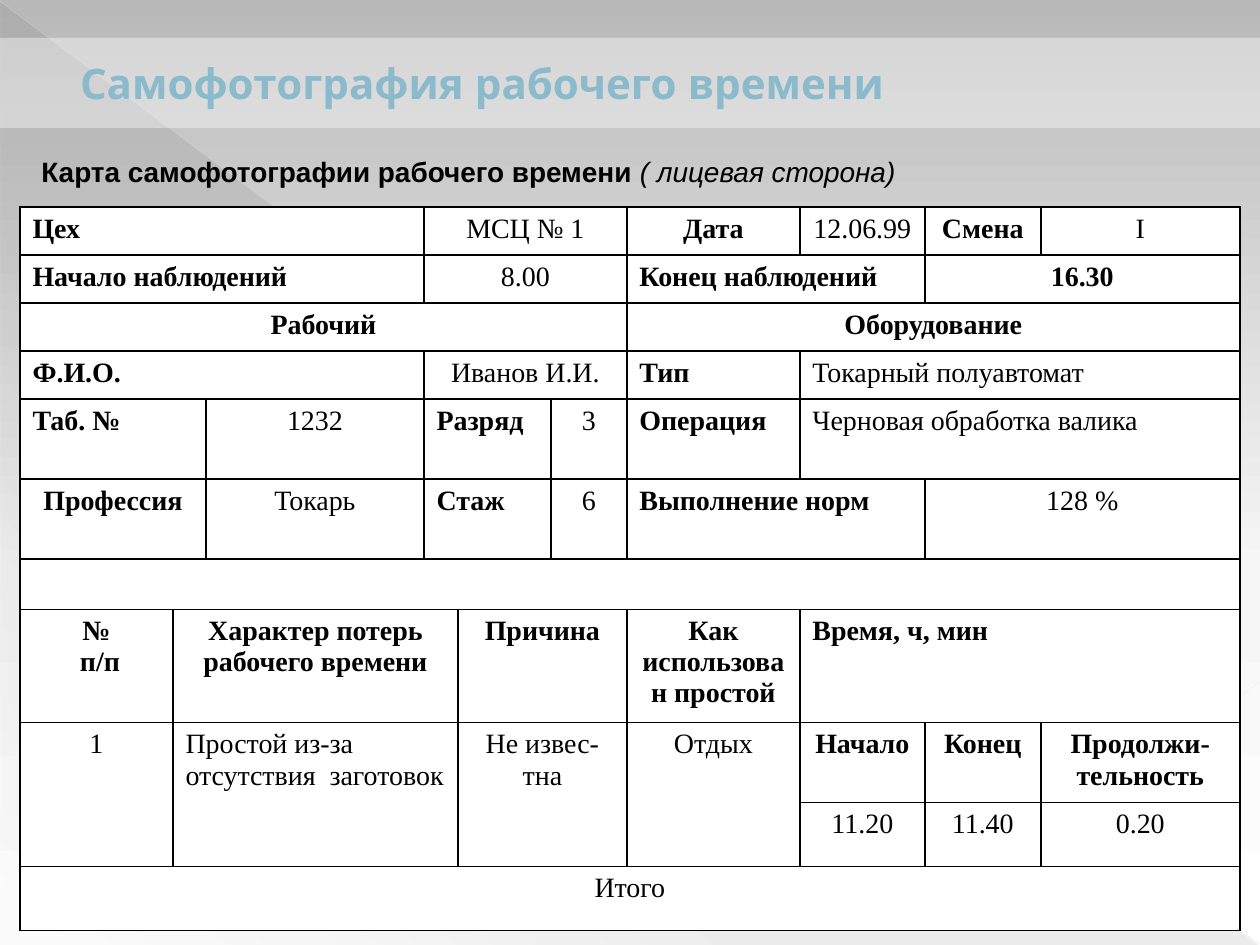
from lxml import etree
from pptx import Presentation
from pptx.dml.color import RGBColor
from pptx.enum.shapes import MSO_CONNECTOR, MSO_SHAPE
from pptx.enum.text import MSO_ANCHOR, PP_ALIGN
from pptx.oxml import parse_xml
from pptx.oxml.ns import qn
from pptx.util import Pt

PX = 914400 // 126
LEFT, CENTER = PP_ALIGN.LEFT, PP_ALIGN.CENTER
MIDDLE = MSO_ANCHOR.MIDDLE
STRAIGHT = MSO_CONNECTOR.STRAIGHT
NAMESPACE = "http://schemas.openxmlformats.org/drawingml/2006/main"
color = RGBColor.from_string


def write(paragraph, text, font="Times New Roman", size=16, fill="000000",
          bold=False, italic=False, align=LEFT):
    paragraph.alignment = align
    span = paragraph.add_run()
    span.text = text
    span.font.name = font
    span.font.size = Pt(size)
    span.font.bold = bold
    span.font.italic = italic
    span.font.color.rgb = color(fill)


def gradient(stops, angle):
    marks = "".join(
        f'<a:gs pos="{place * 1000}"><a:srgbClr val="{shade}">'
        f'<a:alpha val="{opacity * 1000}"/></a:srgbClr></a:gs>'
        for place, shade, opacity in stops)
    return parse_xml(
        f'<a:gradFill xmlns:a="{NAMESPACE}" rotWithShape="1"><a:gsLst>{marks}</a:gsLst>'
        f'<a:lin ang="{angle * 60000}" scaled="0"/></a:gradFill>')


deck = Presentation()
deck.slide_width, deck.slide_height = 1260 * PX, 945 * PX
page = deck.slides.add_slide(deck.slide_layouts[5])

page.background.fill.solid()
page.background.fill.fore_color.rgb = color("B9B9B9")
backdrop = page.background._cSld.find(".//" + qn("a:solidFill"))
backdrop.getparent().replace(backdrop, gradient(
    [(0, "B9B9B9", 100), (60, "F6F6F6", 100), (100, "FFFFFF", 100)], 90))

triangle = page.shapes.add_shape(
    MSO_SHAPE.RIGHT_TRIANGLE, 1 * PX, 2 * PX, 1258 * PX, 943 * PX)
triangle.shadow.inherit = False
triangle.line.fill.background()
triangle.fill.solid()
solid = triangle._element.spPr.find(qn("a:solidFill"))
solid.getparent().replace(solid, gradient(
    [(0, "3B3B3B", 10), (70, "3B3B3B", 8), (100, "3B3B3B", 1)], 133))

for x1, y1, x2, y2, shade, width, opacity in [
    (0, 1, 1259, 944, "EAE8E6", 0.39, 35),
    (1260, 682, 891, 944, "ECEAE8", 0.47, 45),
]:
    ray = page.shapes.add_connector(STRAIGHT, x1 * PX, y1 * PX, x2 * PX, y2 * PX)
    ray.line.color.rgb = color(shade)
    ray.line.width = Pt(width)
    tint = ray._element.spPr.find(".//" + qn("a:srgbClr"))
    etree.SubElement(tint, qn("a:alpha"), val=str(opacity * 1000))
    etree.SubElement(ray._element.spPr, qn("a:effectLst"))

title = page.shapes.title
page.shapes._spTree.append(title._element)
title.left, title.top, title.width, title.height = 0, 38 * PX, 1260 * PX, 90 * PX
title.fill.solid()
title.fill.fore_color.rgb = color("FFFFFF")
tint = title._element.spPr.find(".//" + qn("a:srgbClr"))
etree.SubElement(tint, qn("a:alpha"), val="40000")
title.text_frame.margin_left = 80 * PX
title.text_frame.vertical_anchor = MIDDLE
write(title.text_frame.paragraphs[0], "Самофотография рабочего времени",
      font="League Spartan", size=24, fill="8ABACB", bold=True)

box = page.shapes.add_textbox(29 * PX, 148 * PX, 1182 * PX, 47 * PX)
box.text_frame.word_wrap = True
box.text_frame.vertical_anchor = MIDDLE
caption = box.text_frame.paragraphs[0]
write(caption, "Карта самофотографии рабочего времени ", font="Arial", bold=True)
write(caption, "( лицевая сторона)", font="Arial", italic=True)

columns = [153, 33, 218, 34, 93, 76, 173, 125, 116, 199]
heights = [48, 48, 48, 48, 80, 80, 48, 113, 80, 64, 64]
HEAD = {"bold": True}
HEAD_CENTER = {"bold": True, "align": CENTER}
VALUE = {}
VALUE_CENTER = {"align": CENTER}

card = [
    [(0, 1, 3, "Цех", HEAD), (3, 1, 3, "МСЦ № 1", VALUE_CENTER),
     (6, 1, 1, "Дата", HEAD_CENTER), (7, 1, 1, "12.06.99", VALUE_CENTER),
     (8, 1, 1, "Смена", HEAD_CENTER), (9, 1, 1, "I", VALUE_CENTER)],
    [(0, 1, 3, "Начало наблюдений", HEAD), (3, 1, 3, "8.00", VALUE_CENTER),
     (6, 1, 2, "Конец наблюдений", HEAD), (8, 1, 2, "16.30", HEAD_CENTER)],
    [(0, 1, 6, "Рабочий", HEAD_CENTER), (6, 1, 4, "Оборудование", HEAD_CENTER)],
    [(0, 1, 3, "Ф.И.О.", HEAD), (3, 1, 3, "Иванов И.И.", VALUE_CENTER),
     (6, 1, 1, "Тип", HEAD), (7, 1, 3, "Токарный полуавтомат", VALUE)],
    [(0, 1, 2, "Таб. №", HEAD), (2, 1, 1, "1232", VALUE_CENTER),
     (3, 1, 2, "Разряд", HEAD), (5, 1, 1, "3", VALUE_CENTER),
     (6, 1, 1, "Операция", HEAD), (7, 1, 3, "Черновая обработка валика", VALUE)],
    [(0, 1, 2, "Профессия", HEAD_CENTER), (2, 1, 1, "Токарь", VALUE_CENTER),
     (3, 1, 2, "Стаж", HEAD), (5, 1, 1, "6", VALUE_CENTER),
     (6, 1, 2, "Выполнение норм", HEAD), (8, 1, 2, "128 %", VALUE_CENTER)],
    [(0, 1, 10, "", VALUE)],
    [(0, 1, 1, "№\n п/п", HEAD_CENTER),
     (1, 1, 3, "Характер потерь рабочего времени", HEAD_CENTER),
     (4, 1, 2, "Причина", HEAD_CENTER),
     (6, 1, 1, "Как использован простой", HEAD_CENTER),
     (7, 1, 3, "Время, ч, мин", HEAD)],
    [(0, 2, 1, "1", VALUE_CENTER),
     (1, 2, 3, "Простой из-за отсутствия  заготовок", VALUE),
     (4, 2, 2, "Не извес-\nтна", VALUE_CENTER), (6, 2, 1, "Отдых", VALUE_CENTER),
     (7, 1, 1, "Начало", HEAD_CENTER), (8, 1, 1, "Конец", HEAD_CENTER),
     (9, 1, 1, "Продолжи-\nтельность", HEAD_CENTER)],
    [(7, 1, 1, "11.20", VALUE_CENTER), (8, 1, 1, "11.40", VALUE_CENTER),
     (9, 1, 1, "0.20", VALUE_CENTER)],
    [(0, 1, 10, "Итого", VALUE_CENTER)],
]

table = page.shapes.add_table(
    len(heights), len(columns), 20 * PX, 207 * PX,
    sum(columns) * PX, sum(heights) * PX).table
table.first_row = False
table.horz_banding = False
for column, width in zip(table.columns, columns):
    column.width = width * PX
for row, height in zip(table.rows, heights):
    row.height = height * PX

for cell in table.iter_cells():
    properties = cell._tc.get_or_add_tcPr()
    for side in ("lnL", "lnR", "lnT", "lnB"):
        border = etree.SubElement(properties, qn("a:" + side), w=str(Pt(1)))
        paint = etree.SubElement(border, qn("a:solidFill"))
        etree.SubElement(paint, qn("a:srgbClr"), val="000000")
    cell.fill.solid()
    cell.fill.fore_color.rgb = color("FFFFFF")
    cell.text_frame.paragraphs[0].font.size = Pt(16)

for top, entries in enumerate(card):
    for left, down, across, text, style in entries:
        cell = table.cell(top, left)
        if down * across > 1:
            cell.merge(table.cell(top + down - 1, left + across - 1))
        for number, line in enumerate(text.split("\n")):
            frame = cell.text_frame
            paragraph = frame.add_paragraph() if number else frame.paragraphs[0]
            write(paragraph, line, **style)

deck.save("out.pptx")
